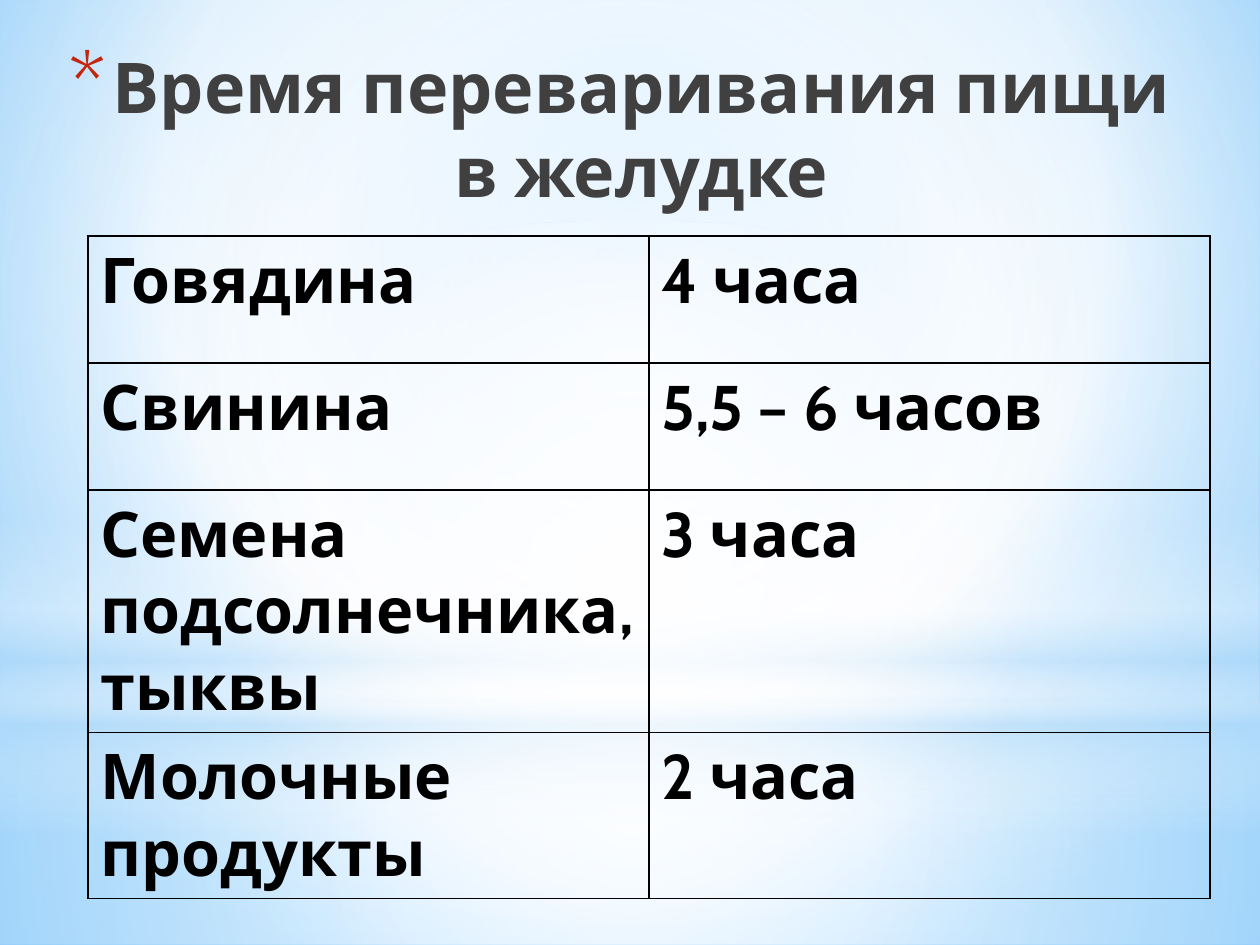
"""Build a slide with a table of food digestion times in the stomach."""
from pptx import Presentation, util as u
from pptx.dml.color import RGBColor
from pptx.enum import shapes, text
from pptx.oxml import parse_xml
from pptx.oxml.ns import nsdecls, qn

TITLE = "Время переваривания пищи в желудке"
DIGESTION_TIMES = [
    ("Говядина", "4 часа"),
    ("Свинина", "5,5 – 6 часов"),
    ("Семена подсолнечника, тыквы", "3 часа"),
    ("Молочные продукты", "2 часа"),
]
ROW_HEIGHTS = [127, 127, 219, 127]
COLUMN_WIDTH = 561
CENTER = (50, 50, 50, 50)

THEME = {
    "font": "Cabin",
    "title_size": 40,
    "table_size": 36,
    "table_text": "000000",
    "border": "000000",
    "border_width": 1,
    "bullet": "C3260C",
    "bullet_percent": 128,
    "title_stops": [(0, "000000", 100), (40, "404040", 100), (100, "212745", 65)],
    "background_stops": [(0, "9ED5FF", 100), (60, "FFFFFF", 100), (100, "5BB9FF", 100)],
    "ground_stops": [(0, "FFFFFF", 91), (37, "FFFFFF", 76), (100, "B4DCFA", 79)],
    "sky_stops": [(0, "FFFFFF", 89), (48, "FFFFFF", 62), (100, "B4DCFA", 79)],
    "wave_stops": [(0, "FFFFFF", 0), (29, "FFFFFF", 30), (45, "B4DCFA", 40),
                   (55, "FFFFFF", 26), (65, "B4DCFA", 60), (100, "FFFFFF", 0)],
    "glow_stops": [(0, "FFFFFF", 100), (56, "FFFFFF", 0)],
}

RECTANGLE, OVAL = shapes.MSO_SHAPE.RECTANGLE, shapes.MSO_SHAPE.OVAL
BACKDROP = [
    (RECTANGLE, (0, 703, 1260, 242), "ground_stops", CENTER),
    (RECTANGLE, (0, 0, 1260, 703), "sky_stops", CENTER),
    (RECTANGLE, (0, 519, 1260, 315), "wave_stops", None),
    (OVAL, (0, 221, 1260, 703), "glow_stops", CENTER),
]


def px(value):
    return round(value * u.Inches(1) / 126)


def apply_gradient(fill, owner, stops, focus=None):
    fill.solid()
    fill.fore_color.rgb = RGBColor.from_string(stops[0][1])
    stop_xml = "".join(
        f'<a:gs pos="{position * 1000}"><a:srgbClr val="{color}">'
        f'<a:alpha val="{opacity * 1000}"/></a:srgbClr></a:gs>'
        for position, color, opacity in stops
    )
    direction = '<a:lin ang="5400000" scaled="0"/>'
    if focus:
        sides = " ".join(f'{side}="{value * 1000}"' for side, value in zip("ltrb", focus))
        direction = f'<a:path path="circle"><a:fillToRect {sides}/></a:path>'
    solid = next(owner.iter(qn("a:solidFill")))
    solid.getparent().replace(solid, parse_xml(
        f'<a:gradFill {nsdecls("a")} rotWithShape="1">'
        f"<a:gsLst>{stop_xml}</a:gsLst>{direction}</a:gradFill>"
    ))


def add_run(paragraph, content, size):
    run = paragraph.add_run()
    run.text = content
    run.font.name = THEME["font"]
    run.font.size = u.Pt(size)
    run.font.bold = True
    return run


def add_backdrop(slide):
    apply_gradient(slide.background.fill, slide.element,
                   THEME["background_stops"], (20, 10, 20, 60))
    for kind, box, stops, focus in BACKDROP:
        shape = slide.shapes.add_shape(kind, *map(px, box))
        shape.shadow.inherit = False
        shape.line.fill.background()
        apply_gradient(shape.fill, shape.element.spPr, THEME[stops], focus)


def border_cell(cell):
    properties = cell.fill.background() or cell._tc.get_or_add_tcPr()
    for index, side in enumerate("LRTB"):
        properties.insert(index, parse_xml(
            f'<a:ln{side} {nsdecls("a")} w="{u.Pt(THEME["border_width"])}"><a:solidFill>'
            f'<a:srgbClr val="{THEME["border"]}"/></a:solidFill></a:ln{side}>'
        ))


def add_digestion_table(slide):
    frame = slide.shapes.add_table(len(DIGESTION_TIMES), 2, px(88), px(236),
                                   px(2 * COLUMN_WIDTH), px(sum(ROW_HEIGHTS)))
    table = frame.table
    table.first_row = table.horz_banding = False
    for column in table.columns:
        column.width = px(COLUMN_WIDTH)
    for row, height, values in zip(table.rows, ROW_HEIGHTS, DIGESTION_TIMES):
        row.height = px(height)
        for cell, value in zip(row.cells, values):
            run = add_run(cell.text_frame.paragraphs[0], value, THEME["table_size"])
            run.font.color.rgb = RGBColor.from_string(THEME["table_text"])
            border_cell(cell)


def fill_title(title):
    title.left, title.top, title.width, title.height = map(px, (54, 37, 1131, 139))
    frame = title.text_frame
    frame.word_wrap = True
    frame.auto_size = text.MSO_AUTO_SIZE.NONE
    frame.vertical_anchor = text.MSO_ANCHOR.TOP
    paragraph = frame.paragraphs[0]
    paragraph.alignment = text.PP_ALIGN.CENTER
    run = add_run(paragraph, TITLE, THEME["title_size"])
    apply_gradient(run.font.fill, title.element.txBody, THEME["title_stops"])
    properties = paragraph._p.get_or_add_pPr()
    properties.set("marL", str(px(44)))
    properties.set("indent", str(-px(44)))
    for bullet in (
        f'<a:buClr {nsdecls("a")}><a:srgbClr val="{THEME["bullet"]}"/></a:buClr>',
        f'<a:buSzPct {nsdecls("a")} val="{THEME["bullet_percent"] * 1000}"/>',
        f'<a:buFont {nsdecls("a")} typeface="{THEME["font"]}"/>',
        f'<a:buChar {nsdecls("a")} char="*"/>',
    ):
        properties.append(parse_xml(bullet))
    title.element.getparent().append(title.element)


def main():
    presentation = Presentation()
    presentation.slide_width, presentation.slide_height = px(1260), px(945)
    slide = presentation.slides.add_slide(presentation.slide_layouts[5])
    add_backdrop(slide)
    add_digestion_table(slide)
    fill_title(slide.shapes.title)
    presentation.save("out.pptx")


if __name__ == "__main__":
    main()
